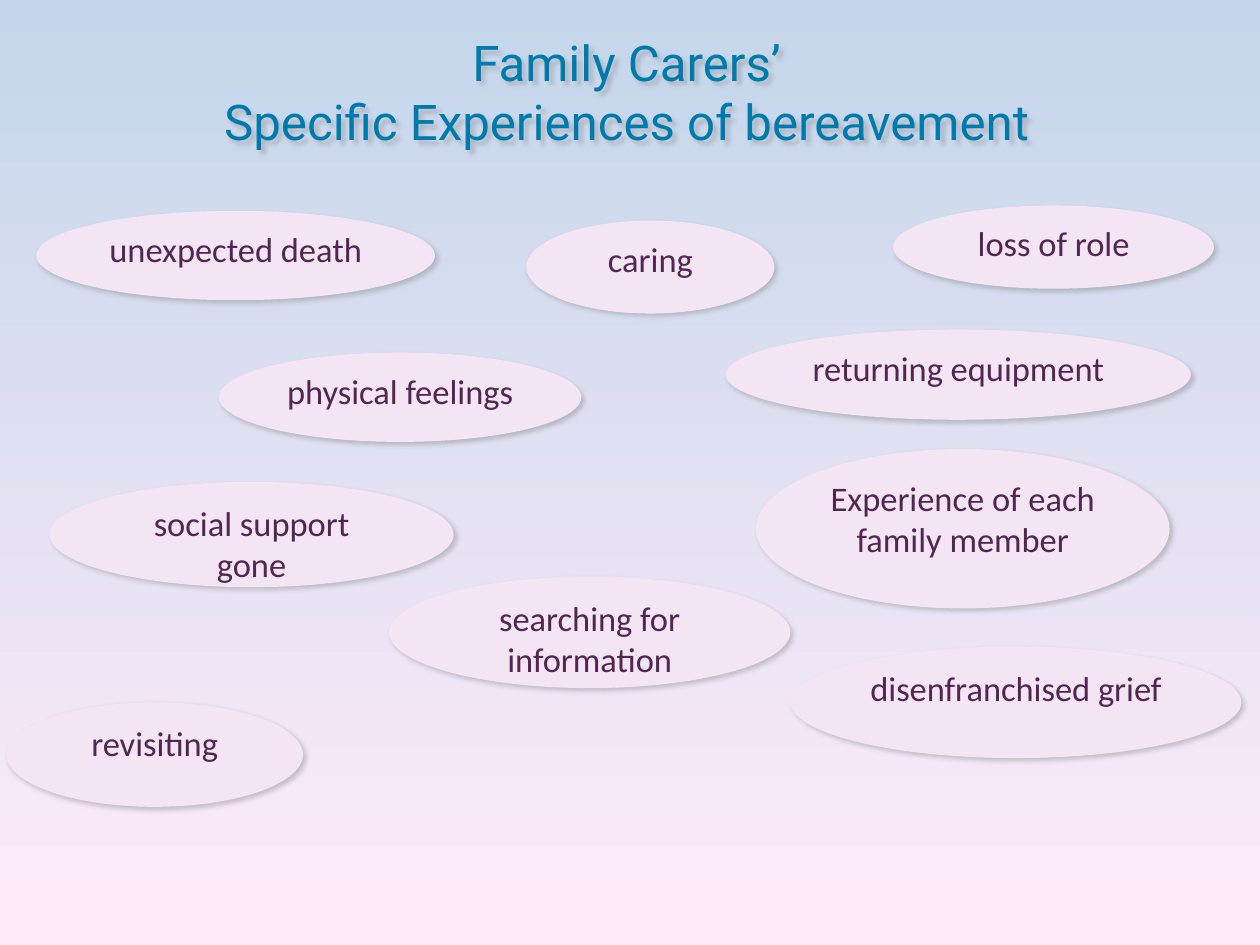
from dataclasses import dataclass

from lxml.etree import SubElement
from pptx import Presentation
from pptx.dml.color import RGBColor
from pptx.enum.shapes import MSO_SHAPE as Shp
from pptx.enum.text import MSO_ANCHOR as Anchor, MSO_AUTO_SIZE as Fit, PP_ALIGN as Align
from pptx.oxml.ns import qn
from pptx.shapes.base import BaseShape
from pptx.slide import Slide
from pptx.util import Inches, Pt


@dataclass(frozen=True)
class Theme:
    sky: str = "C4D6EB"
    blush: str = "FFEBFA"
    title: str = "007AAA"
    bubble: str = "F3E5F3"
    ink: str = "512651"
    shadow: str = "808080"
    title_font: str = "Roboto"
    body_font: str = "Calibri"
    title_size: int = 40
    body_size: int = 28


@dataclass(frozen=True)
class Bubble:
    text: str
    left: float
    top: float
    width: float
    height: float


THEME = Theme()
TITLE = ["Family Carers’ ", "Specific Experiences of bereavement "]
BUBBLES = [
    Bubble("caring", 5.94, 2.49, 2.8, 1.05),
    Bubble("unexpected death", 0.41, 2.38, 4.5, 1.01),
    Bubble("returning equipment", 8.19, 3.72, 5.25, 1.02),
    Bubble("physical feelings", 2.47, 3.98, 4.09, 1.01),
    Bubble("Experience of each family member", 8.53, 5.07, 4.67, 1.8),
    Bubble("social support gone", 0.56, 5.44, 4.56, 1.19),
    Bubble("searching for information", 4.39, 6.51, 4.53, 1.26),
    Bubble("loss of role", 10.08, 2.32, 3.62, 0.94),
    Bubble("revisiting", 0.07, 7.93, 3.35, 1.18),
    Bubble("disenfranchised grief", 8.92, 7.3, 5.09, 1.26),
]


def add_shadow(sp: BaseShape) -> None:
    """Soft grey shadow falling to the lower right."""
    sp.shadow.inherit = False
    effects = sp._element.spPr.find(qn("a:effectLst"))
    outer = SubElement(effects, qn("a:outerShdw"), blurRad=str(Pt(4)), dist=str(Pt(3)),
                       dir=str(45 * 60000), algn="tl", rotWithShape="0")
    color = SubElement(outer, qn("a:srgbClr"), val=THEME.shadow)
    SubElement(color, qn("a:alpha"), val="40000")


def write(sp: BaseShape, lines: list[str], font: str, size: int, color: str) -> None:
    """Centred paragraphs, one run each."""
    tf = sp.text_frame
    tf.word_wrap = True
    tf.auto_size = Fit.NONE
    for i, line in enumerate(lines):
        p = tf.add_paragraph() if i else tf.paragraphs[0]
        p.alignment = Align.CENTER
        r = p.add_run()
        r.text = line
        r.font.name = font
        r.font.size = Pt(size)
        r.font.color.rgb = RGBColor.from_string(color)


def paint_background(s: Slide) -> None:
    fill = s.background.fill
    fill.gradient()
    fill.gradient_angle = 270
    for stop, position, color in zip(fill.gradient_stops, (0, 1), (THEME.sky, THEME.blush)):
        stop.position = position
        stop.color.rgb = RGBColor.from_string(color)


def add_title(s: Slide) -> None:
    sp = s.shapes.title
    sp.left, sp.top, sp.width, sp.height = map(Inches, (0.57, 0.22, 13.14, 1.62))
    tf = sp.text_frame
    tf.vertical_anchor = Anchor.MIDDLE
    tf.margin_left = tf.margin_top = tf.margin_right = tf.margin_bottom = 0
    write(sp, TITLE, THEME.title_font, THEME.title_size, THEME.title)
    add_shadow(sp)


def add_bubble(s: Slide, b: Bubble) -> None:
    sp = s.shapes.add_shape(Shp.OVAL, Inches(b.left), Inches(b.top),
                            Inches(b.width), Inches(b.height))
    sp.fill.solid()
    sp.fill.fore_color.rgb = RGBColor.from_string(THEME.bubble)
    sp.line.fill.background()
    sp.text_frame.vertical_anchor = Anchor.TOP
    write(sp, [b.text], THEME.body_font, THEME.body_size, THEME.ink)
    add_shadow(sp)


def main() -> None:
    prs = Presentation()
    prs.slide_width, prs.slide_height = Inches(14.22), Inches(10.67)
    s = prs.slides.add_slide(prs.slide_layouts[5])  # title only

    # Backdrop and heading
    paint_background(s)
    add_title(s)

    # Experiences
    for b in BUBBLES:
        add_bubble(s, b)

    prs.save("out.pptx")


if __name__ == "__main__":
    main()
